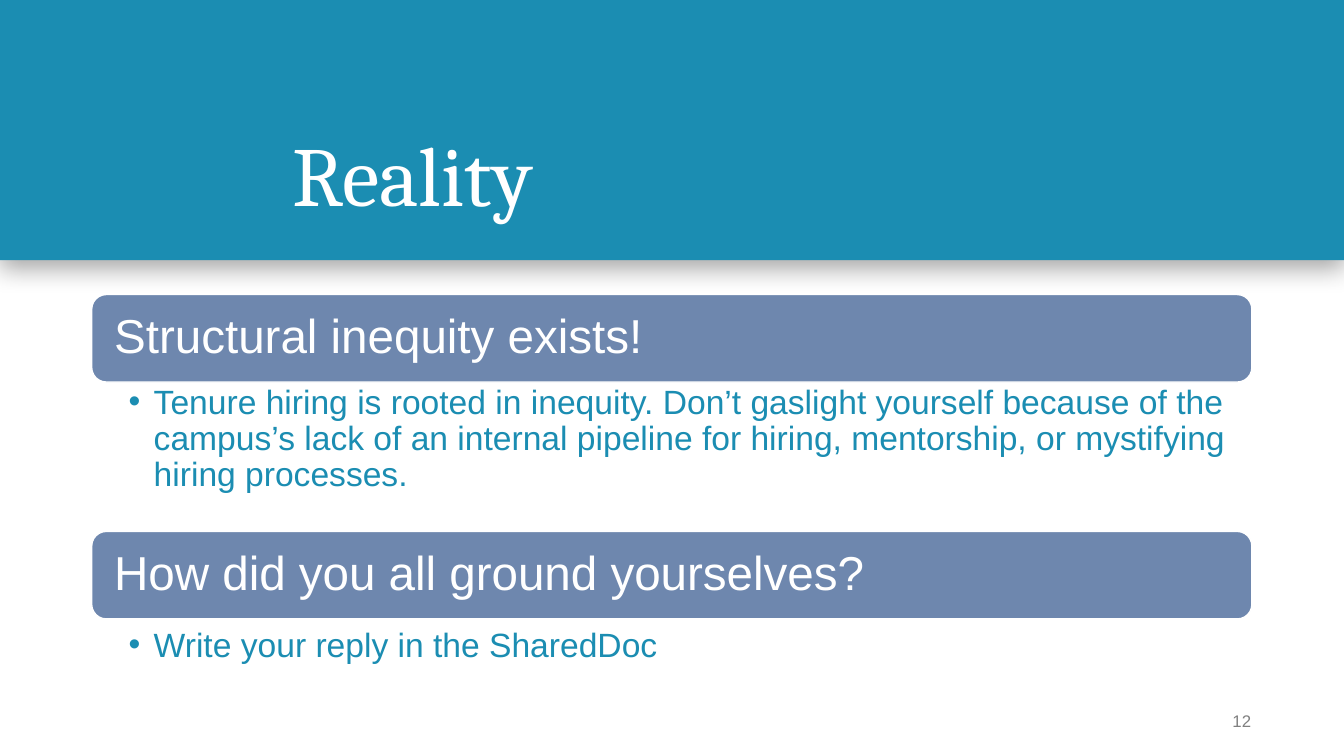
from lxml.etree import SubElement as Sub
from pptx import Presentation
from pptx.dml.color import RGBColor as Rgb
from pptx.enum.shapes import MSO_SHAPE as Shape
from pptx.enum.text import MSO_ANCHOR as Anchor, PP_ALIGN as Align
from pptx.oxml.ns import qn
from pptx.util import Pt

# Content
TITLE = "Reality"
PAGE = "12"
PARTS = [  # heading, bullet, top of bar, top and height of bullet box
    ("Structural inequity exists!",
     "Tenure hiring is rooted in inequity. Don’t gaslight yourself because of the "
     "campus’s lack of an internal pipeline for hiring, mentorship, or mystifying "
     "hiring processes.", 210.4, 272.9, 110.9),
    ("How did you all ground yourselves?",
     "Write your reply in the SharedDoc", 379.6, 446.5, 44.6),
]

# Formats
HEX = {"teal": "1B8DB2", "slate": "6E87AE", "white": "FFFFFF", "gray": "808080",
       "black": "000000"}
FONTS = {
    "title": {"name": "Cambria", "size": Pt(60), "color": "white"},
    "head": {"name": "Arial", "size": Pt(34), "color": "white"},
    "item": {"name": "Arial", "size": Pt(24), "color": "teal"},
    "page": {"name": "Arial", "size": Pt(12), "color": "gray"},
}
WIDE, HIGH = 960, 540
LEFT, SPAN, BAR = 65.5, 828.7, 62.5

deck = Presentation()
deck.slide_width, deck.slide_height = Pt(WIDE), Pt(HIGH)
slide = deck.slides.add_slide(deck.slide_layouts[6])


def color(name):
    return Rgb.from_string(HEX[name])


def block(kind, box, fill, line=None):
    shape = slide.shapes.add_shape(kind, *map(Pt, box))
    shape.shadow.inherit = False
    shape.fill.solid()
    shape.fill.fore_color.rgb = color(fill)
    if line:
        shape.line.color.rgb = color(line)
        shape.line.width = Pt(1)
    else:
        shape.line.fill.background()
    return shape


def label(box):
    return slide.shapes.add_textbox(*map(Pt, box))


def write(shape, text, style, anchor, pads, align=Align.LEFT, space=0.9, dot=False):
    frame = shape.text_frame
    frame.word_wrap = True
    frame.vertical_anchor = anchor
    for side, pad in zip(("left", "top", "right", "bottom"), pads):
        setattr(frame, "margin_" + side, Pt(pad))
    para = frame.paragraphs[0]
    para.text = text
    para.alignment = align
    para.line_spacing = space
    if dot:
        props = para._p.get_or_add_pPr()
        props.set("marL", str(Pt(18)))
        props.set("indent", str(-Pt(18)))
        Sub(props, qn("a:buFont"), typeface="Arial")
        Sub(props, qn("a:buChar"), char="•")
    font = para.runs[0].font
    for key, value in FONTS[style].items():
        if key == "color":
            font.color.rgb = color(value)
        else:
            setattr(font, key, value)


# Banner with a soft shadow below
banner = block(Shape.RECTANGLE, (0, 0, WIDE, 185.8), "teal")
glow = Sub(banner._element.spPr.find(qn("a:effectLst")), qn("a:outerShdw"),
           blurRad=str(Pt(18)), dist=str(Pt(5)), dir="5400000",
           algn="t", rotWithShape="0")
shade = Sub(glow, qn("a:srgbClr"), val=HEX["black"])
Sub(shade, qn("a:alpha"), val="35000")

# Title and page number
write(label((201.6, 31.7, 692.6, 132.5)), TITLE, "title", Anchor.BOTTOM,
      (7.2, 3.6, 7.2, 3.6))
write(label((821.7, 500.4, 72, 28.8)), PAGE, "page", Anchor.MIDDLE,
      (7.2, 3.6, 0, 3.6), Align.RIGHT, 1.0)

# Bars with their bullets
for head, item, top, low, tall in PARTS:
    bar = block(Shape.ROUNDED_RECTANGLE, (LEFT, top, SPAN, BAR), "slate", "white")
    write(bar, head, "head", Anchor.MIDDLE, (13, 10, 13, 10))
    write(label((LEFT, low, SPAN, tall)), item, "item", Anchor.TOP,
          (26.3, 2.2, 13.7, 2.2), dot=True)

deck.save("out.pptx")
